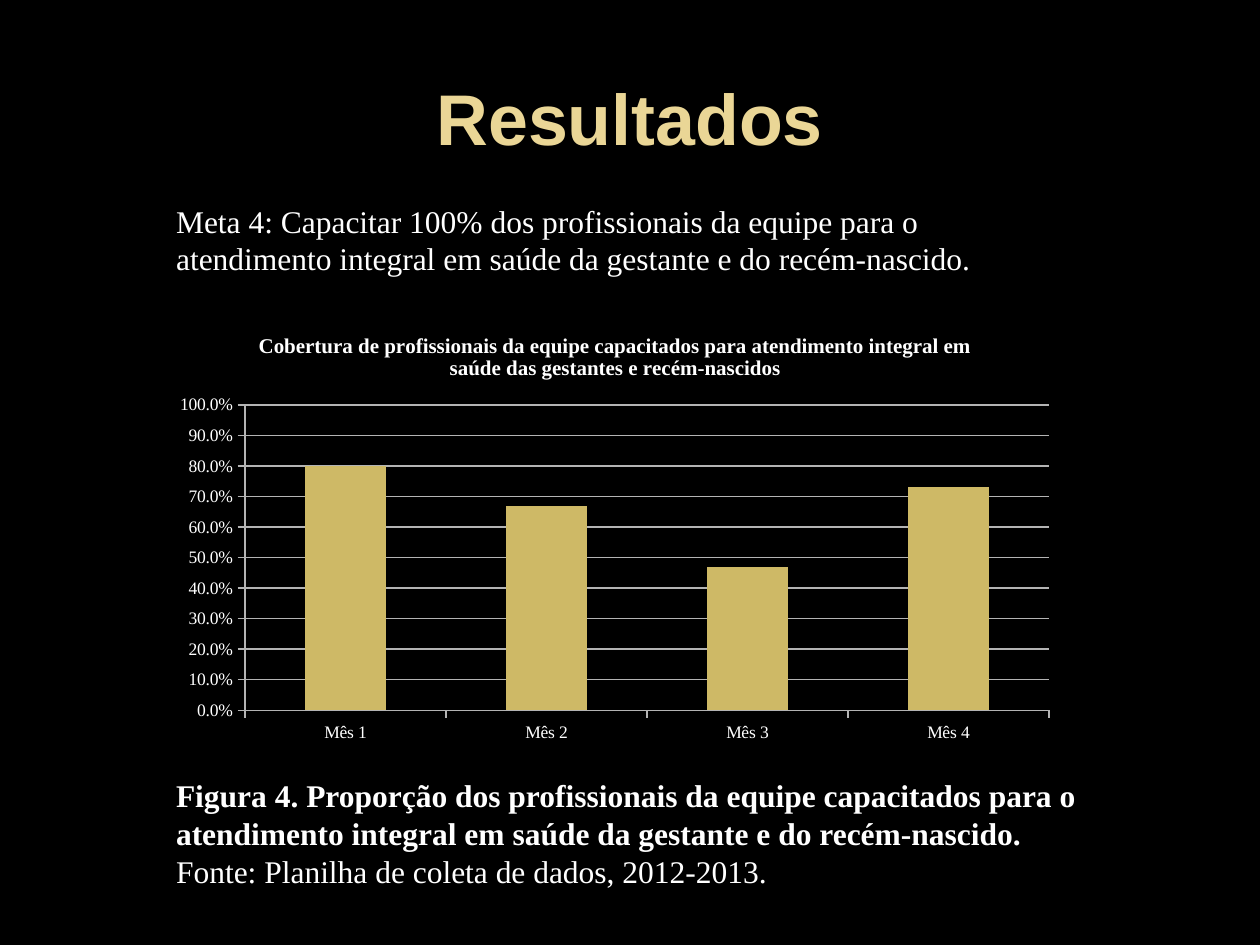
"""Build the results slide with its goal, column chart and caption."""
from dataclasses import dataclass

from lxml.etree import SubElement
from pptx import Presentation
from pptx.chart.data import CategoryChartData as Data
from pptx.dml.color import RGBColor as RGB
from pptx.enum.chart import XL_CHART_TYPE as Kind, XL_TICK_MARK as Tick
from pptx.enum.text import MSO_ANCHOR as Anchor, PP_ALIGN as Align
from pptx.oxml.ns import qn
from pptx.util import Cm, Pt


@dataclass(frozen=True)
class Theme:
    back: RGB = RGB(0, 0, 0)
    ink: RGB = RGB(255, 255, 255)
    head: RGB = RGB(0xEA, 0xD6, 0x96)
    bar: RGB = RGB(0xCE, 0xB9, 0x66)
    grid: RGB = RGB(0xB3, 0xB3, 0xB3)
    sans: str = "Arial"
    serif: str = "Times New Roman"
    big: int = 41
    body: int = 18
    label: int = 12
    tick: int = 10


look = Theme()


def write(para, text, size=look.body, face=look.serif, color=look.ink, bold=False, align=Align.LEFT):
    para.alignment = align
    run = para.add_run()
    run.text = text
    font = run.font
    font.size, font.name, font.bold = Pt(size), face, bold
    font.color.rgb = color


def frame(left, top, width, height, anchor=Anchor.TOP):
    box = slide.shapes.add_textbox(Cm(left), Cm(top), Cm(width), Cm(height))
    text = box.text_frame
    text.word_wrap = True
    text.vertical_anchor = anchor
    return text


deck = Presentation()
deck.slide_width, deck.slide_height = Cm(25.4), Cm(19.05)
slide = deck.slides.add_slide(deck.slide_layouts[6])
slide.background.fill.solid()
slide.background.fill.fore_color.rgb = look.back
left = 3.3

head = frame(1.27, 0.76, 22.86, 3.18, Anchor.MIDDLE)
write(head.paragraphs[0], "Resultados", size=look.big, face=look.sans,
      color=look.head, bold=True, align=Align.CENTER)

name = ("Cobertura de profissionais da equipe capacitados para atendimento integral em "
        "saúde das gestantes e recém-nascidos")
data = Data(number_format="0.0%")
data.categories = [f"Mês {month}" for month in range(1, 5)]
data.add_series(name, (0.8, 0.67, 0.47, 0.73))
chart = slide.shapes.add_chart(Kind.COLUMN_CLUSTERED, Cm(left), Cm(6.32),
                               Cm(18.21), Cm(8.79), data).chart
chart.has_legend = False
chart.font.size, chart.font.name = Pt(look.tick), look.serif
chart.font.color.rgb = look.ink
write(chart.chart_title.text_frame.paragraphs[0], name, size=look.label,
      bold=True, align=Align.CENTER)

plot = chart.plots[0]
plot.gap_width = 150
plot.vary_by_categories = False
fill = plot.series[0].format.fill
fill.solid()
fill.fore_color.rgb = look.bar

rate = chart.value_axis
rate.minimum_scale, rate.maximum_scale, rate.major_unit = 0, 1, 0.1
rate.has_major_gridlines = True
rate.tick_labels.number_format = "0.0%"
rate.tick_labels.number_format_is_linked = False
for axis in (rate, chart.category_axis):
    axis.major_tick_mark, axis.minor_tick_mark = Tick.OUTSIDE, Tick.NONE
for part in (rate, chart.category_axis, rate.major_gridlines):
    part.format.line.color.rgb = look.grid
    part.format.line.width = Pt(0.75)

area = chart.element.find(".//" + qn("c:plotArea"))
for old in area.findall(qn("c:layout")):
    area.remove(old)
place = SubElement(area, qn("c:layout"))
area.insert(0, place)
inner = SubElement(place, qn("c:manualLayout"))
for tag, value in (("layoutTarget", "inner"), ("xMode", "edge"), ("yMode", "edge"),
                   ("x", "0.09"), ("y", "0.21"), ("w", "0.89"), ("h", "0.7")):
    SubElement(inner, qn("c:" + tag)).set("val", value)

goal = frame(left, 3.94, 18.01, 1.8)
write(goal.paragraphs[0], "Meta 4: Capacitar 100% dos profissionais da equipe para o "
      "atendimento integral em saúde da gestante e do recém-nascido.")

note = frame(left, 15.52, 18.8, 2.57)
write(note.paragraphs[0], "Figura 4. Proporção dos profissionais da equipe capacitados para o "
      "atendimento integral em saúde da gestante e do recém-nascido.", bold=True)
write(note.add_paragraph(), "Fonte: Planilha de coleta de dados, 2012-2013.")

deck.save("out.pptx")
